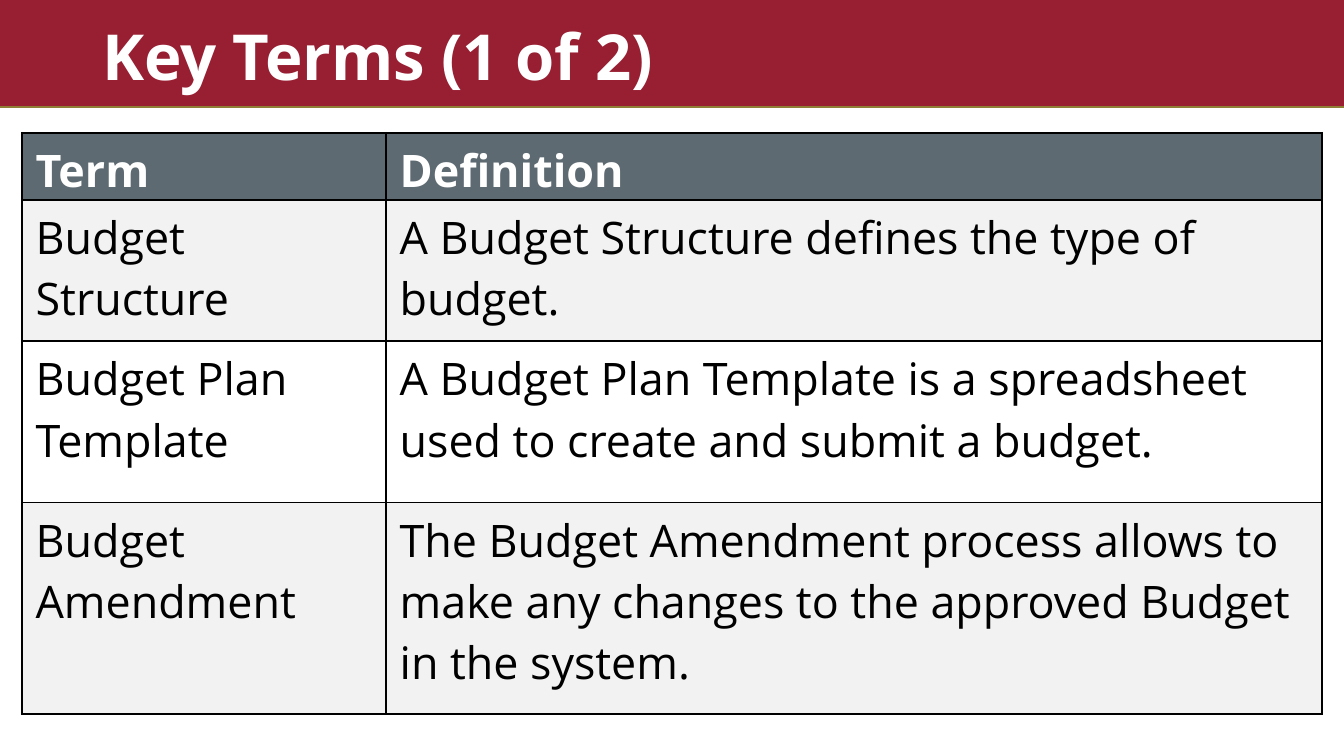
from dataclasses import dataclass

from lxml.etree import SubElement as Sub
from pptx import Presentation as Deck
from pptx.dml.color import RGBColor as Rgb
from pptx.enum.shapes import MSO_CONNECTOR as Link, MSO_SHAPE as Shape
from pptx.enum.text import MSO_ANCHOR as Anchor
from pptx.oxml.ns import qn
from pptx.util import Cm, Pt

TITLE = "Key Terms (1 of 2)"
HEAD = ("Term", "Definition")
TERMS = [
    ("Budget Structure", "A Budget Structure defines the type of budget."),
    ("Budget Plan Template",
     "A Budget Plan Template is a spreadsheet used to create and submit a budget."),
    ("Budget Amendment",
     "The Budget Amendment process allows to make any changes to the "
     "approved Budget in the system."),
]

WIDTH, HEIGHT = 25.4, 14.29
BAND = 2.03
COLS = (6.88, 17.68)
ROWS = (1.19, 2.67, 3.05, 3.99)
TOP = 2.51


@dataclass(frozen=True)
class Theme:
    font: str = "Open Sans"
    title: int = 34
    body: int = 24
    red: str = "981E32"
    gold: str = "8F7E35"
    slate: str = "5E6A71"
    pale: str = "F2F2F2"
    white: str = "FFFFFF"
    black: str = "000000"


LOOK = Theme()


def write(frame, text, size=LOOK.body, color=LOOK.black, bold=False, space=None):
    para = frame.paragraphs[0]
    para.line_spacing = space
    run = para.add_run()
    run.text = text
    font = run.font
    font.name, font.size, font.bold = LOOK.font, Pt(size), bold
    font.color.rgb = Rgb.from_string(color)


def paint(fill, color):
    """Fill with a colour, or clear the fill when there is none."""
    if color:
        fill.solid()
        fill.fore_color.rgb = Rgb.from_string(color)
    else:
        fill.background()


def frame_cell(cell):
    """Rule all four sides; must run before the cell is filled."""
    props = cell._tc.get_or_add_tcPr()
    for side in ("lnL", "lnR", "lnT", "lnB"):
        line = Sub(props, qn(f"a:{side}"), w=str(Pt(1)))
        solid = Sub(line, qn("a:solidFill"))
        Sub(solid, qn("a:srgbClr"), val=LOOK.black)


def add_band(slide):
    band = slide.shapes.add_shape(Shape.RECTANGLE, 0, 0, Cm(WIDTH), Cm(BAND))
    band.shadow.inherit = False
    paint(band.fill, LOOK.red)
    band.line.fill.background()

    rule = slide.shapes.add_connector(
        Link.STRAIGHT, 0, Cm(BAND), Cm(WIDTH), Cm(BAND))
    rule.line.color.rgb = Rgb.from_string(LOOK.gold)
    rule.line.width = Pt(1)
    Sub(rule._element.spPr, qn("a:effectLst"))


def add_title(slide):
    box = slide.shapes.add_textbox(Cm(0.66), Cm(0.33), Cm(24.56), Cm(1.57))
    frame = box.text_frame
    frame.word_wrap = True
    frame.vertical_anchor = Anchor.BOTTOM
    frame.margin_left = frame.margin_right = Cm(1.27)
    write(frame, TITLE, size=LOOK.title, color=LOOK.white, bold=True, space=0.9)


def add_terms(slide):
    data = [HEAD, *TERMS]
    wide = sum(COLS)
    table = slide.shapes.add_table(
        len(data), len(COLS), Cm((WIDTH - wide) / 2), Cm(TOP),
        Cm(wide), Cm(sum(ROWS))).table
    for col, size in zip(table.columns, COLS):
        col.width = Cm(size)
    for row, size in zip(table.rows, ROWS):
        row.height = Cm(size)
    for r, texts in enumerate(data):
        head = r == 0
        shade = LOOK.slate if head else LOOK.pale if r % 2 else None
        ink = LOOK.white if head else LOOK.black
        for c, text in enumerate(texts):
            cell = table.cell(r, c)
            frame_cell(cell)
            paint(cell.fill, shade)
            write(cell.text_frame, text, color=ink, bold=head)


def main():
    deck = Deck()
    deck.slide_width, deck.slide_height = Cm(WIDTH), Cm(HEIGHT)
    slide = deck.slides.add_slide(deck.slide_layouts[6])
    add_band(slide)
    add_title(slide)
    add_terms(slide)
    deck.save("out.pptx")


if __name__ == "__main__":
    main()
